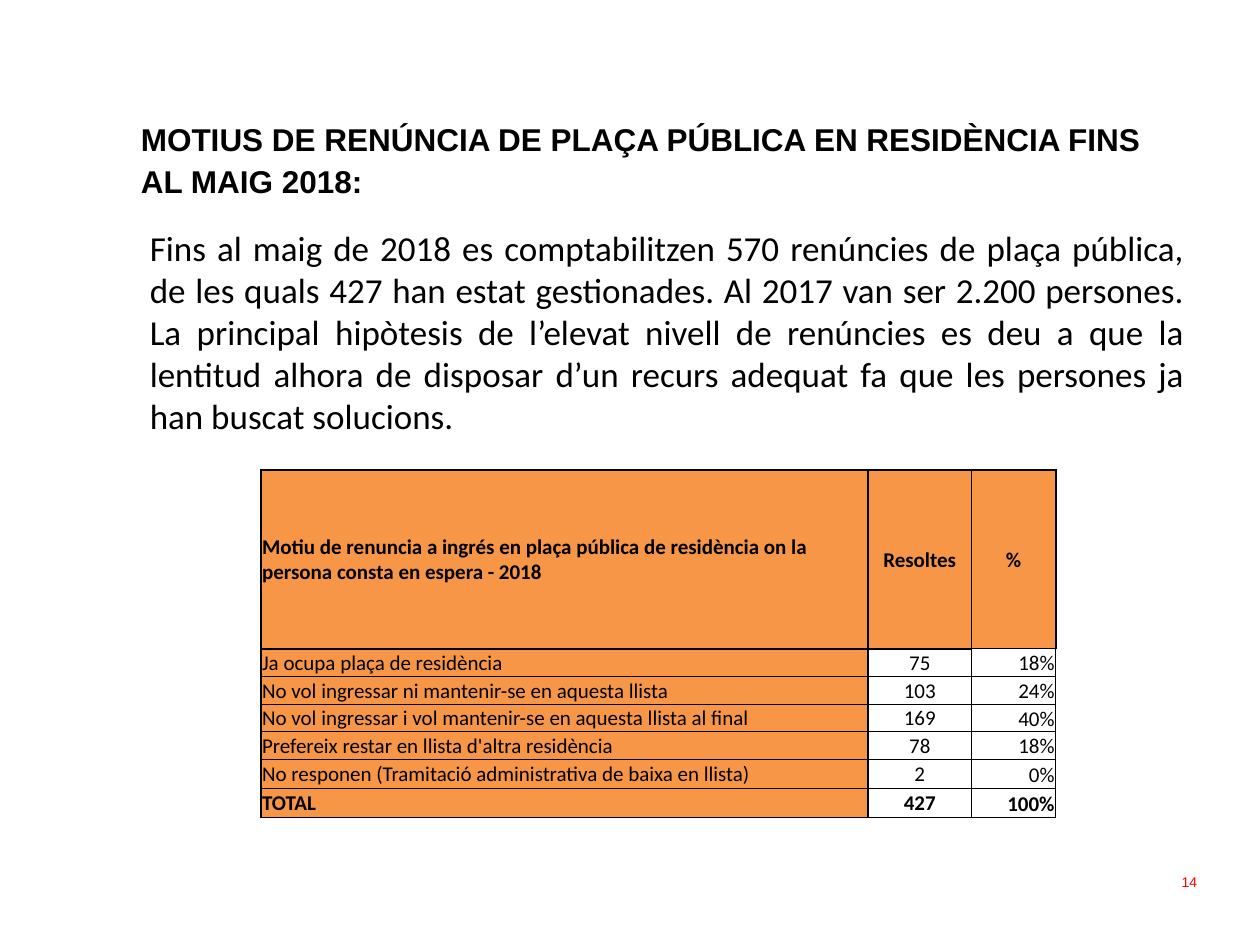
"""Build the slide on reasons for declining a public residence place."""
from dataclasses import dataclass

from lxml import etree
from pptx import Presentation
from pptx import util as u
from pptx.dml.color import RGBColor
from pptx.enum import text
from pptx.oxml import ns


@dataclass(frozen=True)
class Theme:
    black: str = "000000"
    red: str = "FF0000"
    orange: str = "F79646"
    heading: str = "Arial"
    body: str = "Calibri"
    title_size: int = 18
    body_size: int = 20
    table_size: int = 12
    number_size: int = 8
    thin: float = 0.5
    thick: float = 1


@dataclass(frozen=True)
class Block:
    words: str
    at: tuple[float, float, float, float]
    size: int
    font: str
    color: str = Theme.black
    bold: bool = False
    align: text.PP_ALIGN = text.PP_ALIGN.LEFT
    anchor: text.MSO_ANCHOR = text.MSO_ANCHOR.TOP
    top_inset: float = 0.05
    leading: int | None = None


@dataclass(frozen=True)
class Column:
    width: float
    align: text.PP_ALIGN
    anchor: text.MSO_ANCHOR
    filled: bool = False


T = Theme()
AL, AN = text.PP_ALIGN, text.MSO_ANCHOR

BLOCKS = [
    Block("MOTIUS DE RENÚNCIA DE PLAÇA PÚBLICA EN RESIDÈNCIA FINS AL MAIG 2018:",
          (1.02, 0.92, 8.4, 0.94), T.title_size, T.heading, bold=True,
          top_inset=0, leading=24),
    Block("Fins al maig de 2018 es comptabilitzen 570 renúncies de plaça pública, "
          "de les quals 427 han estat gestionades. Al 2017 van ser 2.200 persones. "
          "La principal hipòtesis de l’elevat nivell de renúncies es deu a que la "
          "lentitud alhora de disposar d’un recurs adequat fa que les persones ja "
          "han buscat solucions.",
          (1.09, 1.75, 8.41, 4.95), T.body_size, T.body, align=AL.JUSTIFY),
    Block("14", (7.27, 6.8, 2.33, 0.4), T.number_size, T.heading, T.red,
          align=AL.RIGHT, anchor=AN.MIDDLE),
]

COLUMNS = [
    Column(4.82, AL.LEFT, AN.MIDDLE, filled=True),
    Column(0.82, AL.CENTER, AN.MIDDLE),
    Column(0.67, AL.RIGHT, AN.BOTTOM),
]
ROW_HEIGHTS = [1.42, 0.22, 0.22, 0.22, 0.22, 0.23, 0.23]
ROWS = [
    ("Motiu de renuncia a ingrés en plaça pública de residència on la persona "
     "consta en espera - 2018", "Resoltes", "%"),
    ("Ja ocupa plaça de residència", "75", "18%"),
    ("No vol ingressar ni mantenir-se en aquesta llista", "103", "24%"),
    ("No vol ingressar i vol mantenir-se en aquesta llista al final", "169", "40%"),
    ("Prefereix restar en llista d'altra residència", "78", "18%"),
    ("No responen (Tramitació administrativa de baixa en llista)", "2", "0%"),
    ("TOTAL", "427", "100%"),
]


def add_run(p, words: str, size: int, font: str, color: str, bold: bool) -> None:
    """Append one styled run to a paragraph."""
    r = p.add_run()
    r.text = words
    r.font.size = u.Pt(size)
    r.font.name = font
    r.font.bold = bold
    r.font.color.rgb = RGBColor.from_string(color)


def add_block(s, b: Block) -> None:
    """Draw a wrapped text box."""
    tf = s.shapes.add_textbox(*map(u.Inches, b.at)).text_frame
    tf.word_wrap = True
    tf.vertical_anchor = b.anchor
    tf.margin_top = u.Inches(b.top_inset)
    p = tf.paragraphs[0]
    p.alignment = b.align
    if b.leading:
        p.line_spacing = u.Pt(b.leading)
    add_run(p, b.words, b.size, b.font, b.color, b.bold)


def across(edge: int, col: int) -> float:
    """Return the width of a horizontal rule above row number edge."""
    last = len(ROWS)
    thick_edges = (0,) if col == 2 else (0, 1, last - 1, last)
    return T.thick if edge in thick_edges else T.thin


def down(edge: int, row: int) -> float:
    """Return the width of a vertical rule left of column number edge."""
    return T.thick if edge < 2 or row == 0 else T.thin


def set_borders(cell, row: int, col: int) -> None:
    """Give a cell its four solid rules."""
    widths = {"L": down(col, row), "R": down(col + 1, row),
              "T": across(row, col), "B": across(row + 1, col)}
    tc_pr = cell._tc.get_or_add_tcPr()
    for side, width in widths.items():
        ln = etree.SubElement(tc_pr, ns.qn(f"a:ln{side}"), w=str(u.Pt(width)))
        fill = etree.SubElement(ln, ns.qn("a:solidFill"))
        etree.SubElement(fill, ns.qn("a:srgbClr"), val=T.black)


def fill_cell(cell, row: int, col: int) -> None:
    """Write and style one table cell."""
    column, header = COLUMNS[col], row == 0
    set_borders(cell, row, col)
    if header or column.filled:
        cell.fill.solid()
        cell.fill.fore_color.rgb = RGBColor.from_string(T.orange)
    else:
        cell.fill.background()
    cell.margin_left = cell.margin_right = cell.margin_top = u.Inches(0.01)
    cell.margin_bottom = 0
    cell.vertical_anchor = AN.MIDDLE if header else column.anchor
    p = cell.text_frame.paragraphs[0]
    p.alignment = AL.CENTER if header and col else column.align
    add_run(p, ROWS[row][col], T.table_size, T.body, T.black,
            bold=row in (0, len(ROWS) - 1))


def add_reasons_table(s) -> None:
    """Draw the table of reasons."""
    width, height = sum(c.width for c in COLUMNS), sum(ROW_HEIGHTS)
    table = s.shapes.add_table(len(ROWS), len(COLUMNS), u.Inches(2.07),
                               u.Inches(3.73), u.Inches(width), u.Inches(height)).table
    table.first_row = table.horz_banding = False
    for i, column in enumerate(COLUMNS):
        table.columns[i].width = u.Inches(column.width)
    for row, row_height in enumerate(ROW_HEIGHTS):
        table.rows[row].height = u.Inches(row_height)
        for col in range(len(COLUMNS)):
            fill_cell(table.cell(row, col), row, col)


def main() -> None:
    """Build and save the slide."""
    prs = Presentation()
    prs.slide_width, prs.slide_height = u.Inches(10), u.Inches(7.5)
    s = prs.slides.add_slide(prs.slide_layouts[6])
    for block in BLOCKS:
        add_block(s, block)
    add_reasons_table(s)
    prs.save("out.pptx")


if __name__ == "__main__":
    main()
